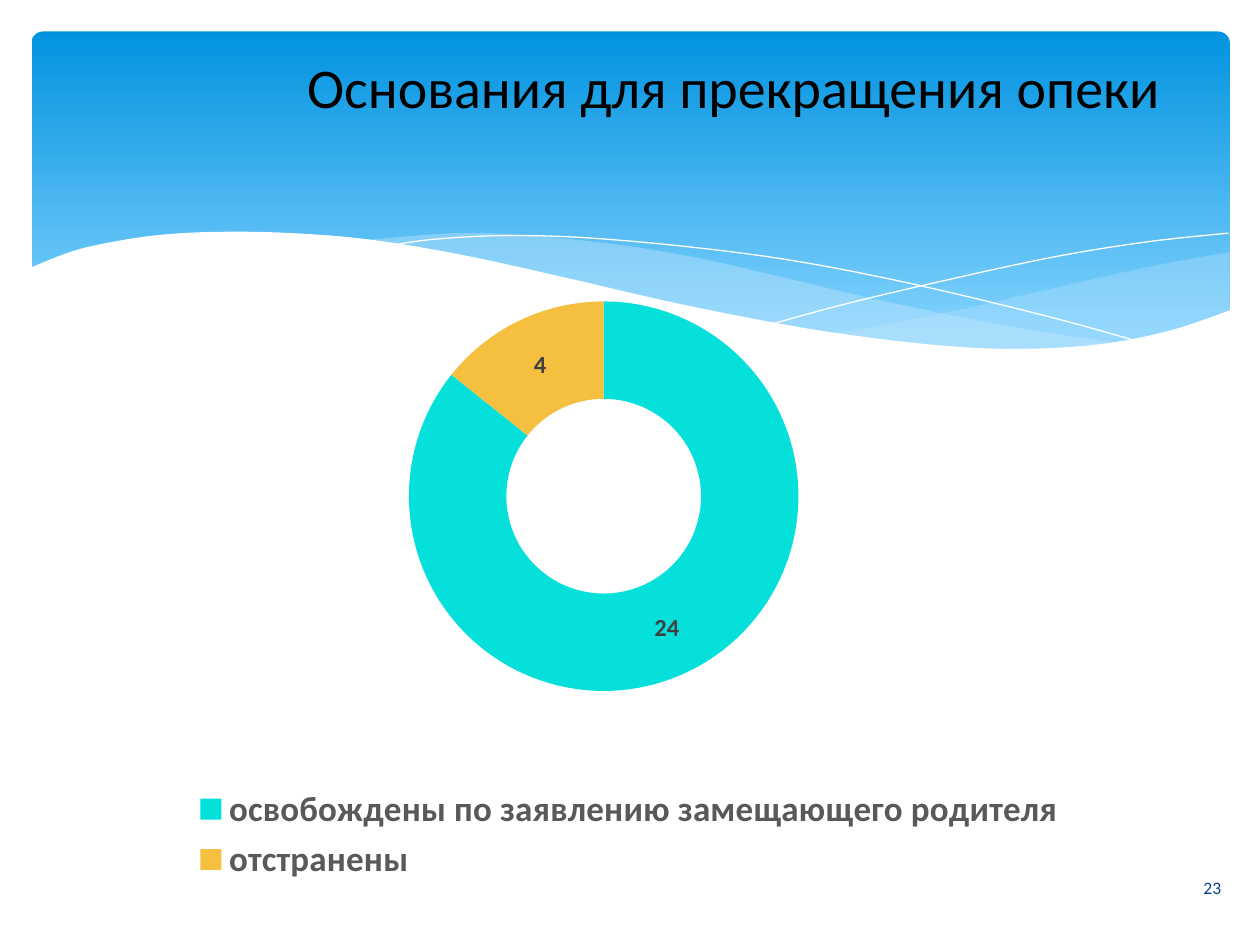
import pptx
import pptx.chart.data
import pptx.dml.color
import pptx.enum.chart
import pptx.enum.shapes
import pptx.enum.text
import pptx.oxml
import pptx.oxml.ns
import pptx.util
from pptx.dml.color import RGBColor
from pptx.util import Inches

FONT = "Calibri"
BLACK = RGBColor(0x00, 0x00, 0x00)
WHITE = RGBColor(0xFF, 0xFF, 0xFF)
SKY_TOP = RGBColor(0x02, 0x93, 0xE0)
SKY_BOTTOM = RGBColor(0x83, 0xD3, 0xFE)
MIST = RGBColor(0xC6, 0xE7, 0xFC)
NAVY = RGBColor(0x07, 0x3E, 0x87)
TURQUOISE = RGBColor(0x05, 0xE0, 0xDB)
AMBER = RGBColor(0xF5, 0xC0, 0x40)
LABEL_GREY = RGBColor(0x40, 0x40, 0x40)
LEGEND_GREY = RGBColor(0x59, 0x59, 0x59)

RIGHT_WAVE_TOP = [(9.76, 2), (9.21, 2.1), (8.61, 2.23), (7.79, 2.42), (7.06, 2.57), (6.61, 2.65)]
RIGHT_WAVE_BOTTOM = [(6.61, 2.65), (7.19, 2.72), (7.69, 2.77), (8.14, 2.78), (8.63, 2.75),
                     (9.05, 2.69), (9.42, 2.59), (9.76, 2.47)]
MIDDLE_WAVE_TOP = [(8.93, 2.73), (8.07, 2.6), (7.06, 2.4), (6.29, 2.22), (5.55, 2.05),
                   (4.89, 1.94), (4.2, 1.87), (3.61, 1.85), (2.86, 1.91)]
MIDDLE_WAVE_BOTTOM = [(2.86, 1.91), (3.62, 2.03), (4.49, 2.22), (5.3, 2.4), (6.01, 2.55),
                      (6.65, 2.66), (7.36, 2.75), (8.07, 2.78), (8.93, 2.73)]
FALLING_LINE = [(3.09, 1.95), (3.44, 1.9), (4.01, 1.87), (4.69, 1.89), (5.56, 1.97),
                (6.36, 2.08), (7.27, 2.26), (8.31, 2.51), (9.07, 2.72)]
RISING_LINE = [(6.13, 2.57), (6.72, 2.41), (7.48, 2.23), (8.36, 2.04), (9.1, 1.92), (9.75, 1.85)]
WHITE_WAVE_TOP = [(9.77, 2.46), (9.3, 2.62), (8.75, 2.73), (8.09, 2.77), (7.44, 2.74),
                  (6.68, 2.65), (6.03, 2.54), (5.29, 2.39), (4.47, 2.2), (3.65, 2.02),
                  (2.92, 1.9), (2.3, 1.85), (1.77, 1.84), (1.32, 1.86), (0.95, 1.91),
                  (0.59, 1.99), (0.23, 2.13)]
WHITE_WAVE_BASE = [(0.23, 3.29), (9.77, 3.29)]


def smooth(anchors, steps=6):
    """Return points of a Catmull-Rom curve through the anchors."""
    padded = [anchors[0], *anchors, anchors[-1]]
    points = [anchors[0]]
    for a, b, c, d in zip(padded, padded[1:], padded[2:], padded[3:]):
        for step in range(1, steps + 1):
            t = step / steps
            points.append(tuple(
                (2 * q + (r - p) * t + (2 * p - 5 * q + 4 * r - s) * t**2
                 + (3 * q - p - 3 * r + s) * t**3) / 2
                for p, q, r, s in zip(a, b, c, d)))
    return points


def add_outline(slide, points, close):
    start, *rest = [(Inches(x), Inches(y)) for x, y in points]
    builder = slide.shapes.build_freeform(*start)
    builder.add_line_segments(rest, close=close)
    shape = builder.convert_to_shape()
    shape.shadow.inherit = False
    return shape


def add_wave(slide, points, color, opacity=100):
    wave = add_outline(slide, points, close=True)
    wave.fill.solid()
    wave.fill.fore_color.rgb = color
    wave.line.fill.background()
    if opacity < 100:
        color_node = wave._element.spPr.find(".//" + pptx.oxml.ns.qn("a:srgbClr"))
        color_node.append(pptx.oxml.parse_xml(
            f'<a:alpha {pptx.oxml.ns.nsdecls("a")} val="{opacity * 1000}"/>'))


def add_hairline(slide, anchors):
    curve = add_outline(slide, smooth(anchors), close=False)
    curve.fill.background()
    curve.line.color.rgb = WHITE
    curve.line.width = pptx.util.Pt(0)


def add_sky(slide):
    sky = slide.shapes.add_shape(pptx.enum.shapes.MSO_SHAPE.ROUNDED_RECTANGLE,
                                 Inches(0.25), Inches(0.25), Inches(9.51), Inches(2.7))
    sky.adjustments[0] = 0.034
    sky.shadow.inherit = False
    sky.line.fill.background()
    sky.fill.gradient()
    sky.fill.gradient_angle = 270
    for stop, color, position in zip(sky.fill.gradient_stops, (SKY_TOP, SKY_BOTTOM), (0, 0.9)):
        stop.color.rgb = color
        stop.position = position


def style_font(font, size, color, bold=None):
    font.name = FONT
    font.size = pptx.util.Pt(size)
    font.color.rgb = color
    font.bold = bold


def write(box, text, size, color, alignment):
    frame = box.text_frame
    frame.text = text
    frame.word_wrap = True
    frame.vertical_anchor = pptx.enum.text.MSO_ANCHOR.MIDDLE
    para = frame.paragraphs[0]
    para.alignment = alignment
    style_font(para.runs[0].font, size, color)


def place_title(slide, text):
    title = slide.shapes.title
    title.left, title.top = Inches(1.69), Inches(0.13)
    title.width, title.height = Inches(8.27), Inches(1.1)
    write(title, text, 32, BLACK, pptx.enum.text.PP_ALIGN.CENTER)
    slide.shapes._spTree.append(title._element)  # in front of the waves


def set_plot_area(chart, x, y, width, height):
    sizes = "".join(f'<c:{tag} val="{value}"/>' for tag, value in
                    (("x", x), ("y", y), ("w", width), ("h", height)))
    layout = pptx.oxml.parse_xml(
        f'<c:layout {pptx.oxml.ns.nsdecls("c")}><c:manualLayout><c:layoutTarget val="inner"/>'
        f'<c:xMode val="edge"/><c:yMode val="edge"/>{sizes}</c:manualLayout></c:layout>')
    plot_area = chart._chartSpace.chart.plotArea
    for old in plot_area.findall(pptx.oxml.ns.qn("c:layout")):
        plot_area.remove(old)
    plot_area.insert(0, layout)


def add_doughnut(slide):
    data = pptx.chart.data.CategoryChartData()
    data.categories = ["освобождены по заявлению замещающего родителя", "отстранены"]
    data.add_series("Series 1", (24, 4))
    data.add_series("Series 2", (None, None))  # empty outer ring
    chart = slide.shapes.add_chart(pptx.enum.chart.XL_CHART_TYPE.DOUGHNUT, Inches(0.27),
                                   Inches(1.62), Inches(9.45), Inches(5.43), data).chart
    style_font(chart.font, 10, BLACK)
    chart.has_title = False
    chart.has_legend = True
    chart.legend.position = pptx.enum.chart.XL_LEGEND_POSITION.BOTTOM
    chart.legend.include_in_layout = False
    style_font(chart.legend.font, 20, LEGEND_GREY, bold=True)
    set_plot_area(chart, 0.233, 0, 0.491, 0.854)
    for series in chart.plots[0].series:
        for index, color in enumerate((TURQUOISE, AMBER)):
            fill = series.points[index].format.fill
            fill.solid()
            fill.fore_color.rgb = color
    labels = chart.plots[0].series[0].data_labels
    labels.show_value = True
    style_font(labels.font, 14, LABEL_GREY, bold=True)


def main():
    deck = pptx.Presentation()
    deck.slide_width, deck.slide_height = Inches(10), Inches(7.5)
    slide = deck.slides.add_slide(deck.slide_layouts[5])
    add_sky(slide)
    add_wave(slide, smooth(RIGHT_WAVE_TOP) + smooth(RIGHT_WAVE_BOTTOM), MIST, 29)
    add_wave(slide, smooth(MIDDLE_WAVE_TOP) + smooth(MIDDLE_WAVE_BOTTOM), MIST, 40)
    add_hairline(slide, FALLING_LINE)
    add_hairline(slide, RISING_LINE)
    add_wave(slide, smooth(WHITE_WAVE_TOP) + WHITE_WAVE_BASE, WHITE)
    place_title(slide, "Основания для прекращения опеки")
    number = slide.shapes.add_textbox(Inches(5.65), Inches(6.84), Inches(4.14), Inches(0.4))
    write(number, "23", 10, NAVY, pptx.enum.text.PP_ALIGN.RIGHT)
    add_doughnut(slide)
    deck.save("out.pptx")


if __name__ == "__main__":
    main()
